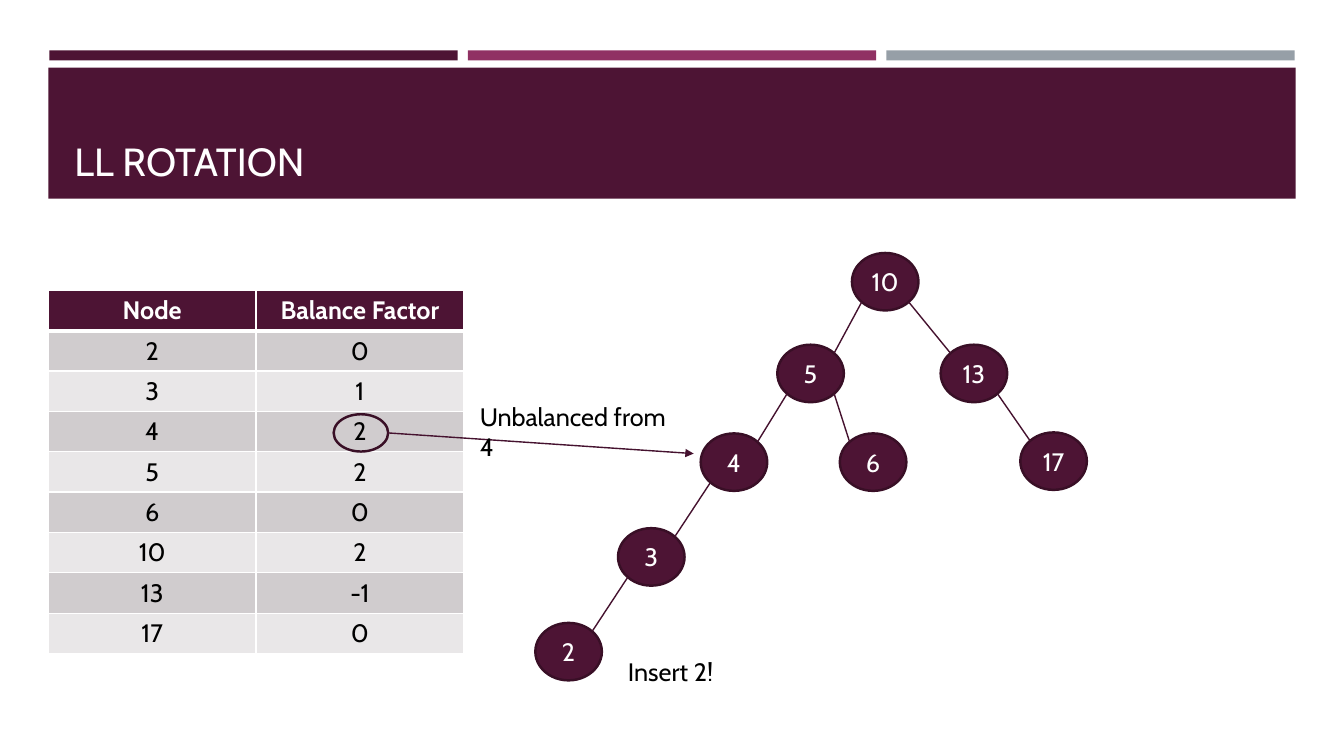
from math import sqrt

from lxml import etree
from pptx import Presentation
from pptx.dml.color import RGBColor
from pptx.enum.shapes import MSO_CONNECTOR, MSO_SHAPE
from pptx.enum.text import MSO_ANCHOR, PP_ALIGN
from pptx.oxml.ns import qn
from pptx.util import Inches, Pt

STRAIGHT = MSO_CONNECTOR.STRAIGHT
RECTANGLE, OVAL = MSO_SHAPE.RECTANGLE, MSO_SHAPE.OVAL
MIDDLE, BOTTOM = MSO_ANCHOR.MIDDLE, MSO_ANCHOR.BOTTOM
LEFT, CENTER = PP_ALIGN.LEFT, PP_ALIGN.CENTER

FONT = "Cabin"
COLORS = {
    "plum": "4D1434", "magenta": "903163", "gray": "969FA7",
    "outline": "390F26", "edge": "45122F", "white": "FFFFFF",
    "black": "000000", "dark_band": "D0CCCE", "light_band": "E9E7E8",
}
TITLE = "LL ROTATION"
STRIPES = ["plum", "magenta", "gray"]
HEADERS = ("Node", "Balance Factor")
BALANCE = [(2, 0), (3, 1), (4, 2), (5, 2), (6, 0), (10, 2), (13, -1), (17, 0)]
NODES = {
    10: (8.45, 2.51), 5: (7.71, 3.42), 13: (9.33, 3.42),
    4: (6.95, 4.3), 6: (8.33, 4.3), 17: (10.12, 4.29),
    3: (6.13, 5.24), 2: (5.31, 6.18),
}
EDGES = [(10, 5), (10, 13), (5, 4), (5, 6), (13, 17), (4, 3), (3, 2)]
NOTES = [("Insert 2!", (6.13, 6.46, 1.06, 0.4), False),
         ("Unbalanced from 4", (4.66, 3.93, 2.15, 0.4), True)]
NODE_WIDTH, NODE_HEIGHT = 0.66, 0.57
TABLE_LEFT, TABLE_TOP, COLUMN_WIDTH, ROW_HEIGHT = 0.48, 2.88, 2.06, 0.4
RING = (3.31, 4.11, 0.54, 0.37)
ARROW_TIP = (6.88, 4.5)


def color(name):
    return RGBColor.from_string(COLORS[name])


def write(frame, text, size, ink, align=LEFT, bold=False):
    frame.text = text
    para = frame.paragraphs[0]
    para.alignment = align
    span = para.runs[0]
    span.font.name = FONT
    span.font.size = Pt(size)
    span.font.bold = bold
    span.font.color.rgb = color(ink)


def add_shape(slide, kind, place, fill=None, line=None):
    shape = slide.shapes.add_shape(kind, *map(Inches, place))
    shape.shadow.inherit = False
    if fill:
        shape.fill.solid()
        shape.fill.fore_color.rgb = color(fill)
    else:
        shape.fill.background()
    if line:
        shape.line.color.rgb = color(line)
        shape.line.width = Pt(1.75)
    else:
        shape.line.fill.background()
    return shape


def add_text(slide, text, place, size, ink, wrap, anchor):
    box = slide.shapes.add_textbox(*map(Inches, place))
    box.text_frame.word_wrap = wrap
    box.text_frame.vertical_anchor = anchor
    write(box.text_frame, text, size, ink)


def add_line(slide, start, end, arrow=False):
    line = slide.shapes.add_connector(STRAIGHT, *map(Inches, start + end))
    line.line.color.rgb = color("edge")
    line.line.width = Pt(1)
    if arrow:
        etree.SubElement(line.line._get_or_add_ln(), qn("a:tailEnd"), type="triangle")
    etree.SubElement(line._element.spPr, qn("a:effectLst"))


def rim_point(node, across, down):
    left, top = NODES[node]
    return (left + NODE_WIDTH / 2 * (1 + across / sqrt(2)),
            top + NODE_HEIGHT / 2 * (1 + down / sqrt(2)))


def add_border(cell, side, width):
    border = etree.SubElement(cell._tc.get_or_add_tcPr(), qn(f"a:{side}"), w=str(Pt(width)))
    fill = etree.SubElement(border, qn("a:solidFill"))
    etree.SubElement(fill, qn("a:srgbClr"), val=COLORS["white"])


def add_balance_table(slide):
    rows = [HEADERS] + BALANCE
    table = slide.shapes.add_table(
        len(rows), len(HEADERS), Inches(TABLE_LEFT), Inches(TABLE_TOP),
        Inches(COLUMN_WIDTH * len(HEADERS)), Inches(ROW_HEIGHT * len(rows))).table
    for r, values in enumerate(rows):
        header = r == 0
        band = "plum" if header else "dark_band" if r % 2 else "light_band"
        for c, value in enumerate(values):
            cell = table.cell(r, c)
            for side in ("lnL", "lnR", "lnT", "lnB"):
                thick = (header and side == "lnB") or (r == 1 and side == "lnT")
                add_border(cell, side, 3 if thick else 1)
            cell.fill.solid()
            cell.fill.fore_color.rgb = color(band)
            write(cell.text_frame, str(value), 18, "white" if header else "black",
                  CENTER, header)


def add_tree(slide):
    for node, (left, top) in NODES.items():
        circle = add_shape(slide, OVAL, (left, top, NODE_WIDTH, NODE_HEIGHT),
                           "plum", "outline")
        circle.text_frame.vertical_anchor = MIDDLE
        circle.text_frame.word_wrap = True
        write(circle.text_frame, str(node), 18, "white", CENTER)
    for parent, child in EDGES:
        side = 1 if child > parent else -1
        add_line(slide, rim_point(parent, side, 1), rim_point(child, -side, -1))


def main():
    deck = Presentation()
    deck.slide_width, deck.slide_height = Inches(13.33), Inches(7.5)
    page = deck.slides.add_slide(deck.slide_layouts[6])
    for i, stripe in enumerate(STRIPES):
        add_shape(page, RECTANGLE, (0.49 + 4.15 * i, 0.5, 4.05, 0.1), stripe)
    add_shape(page, RECTANGLE, (0.48, 0.67, 12.37, 1.3), "plum")
    add_text(page, TITLE, (0.64, 0.77, 12.06, 1.11), 28, "white", True, BOTTOM)
    add_balance_table(page)
    add_tree(page)
    add_shape(page, OVAL, RING, line="outline")
    left, top, width, height = RING
    add_line(page, (left + width, top + height / 2), ARROW_TIP, arrow=True)
    for text, place, wrap in NOTES:
        add_text(page, text, place, 18, "black", wrap, MSO_ANCHOR.TOP)
    deck.save("out.pptx")


if __name__ == "__main__":
    main()
